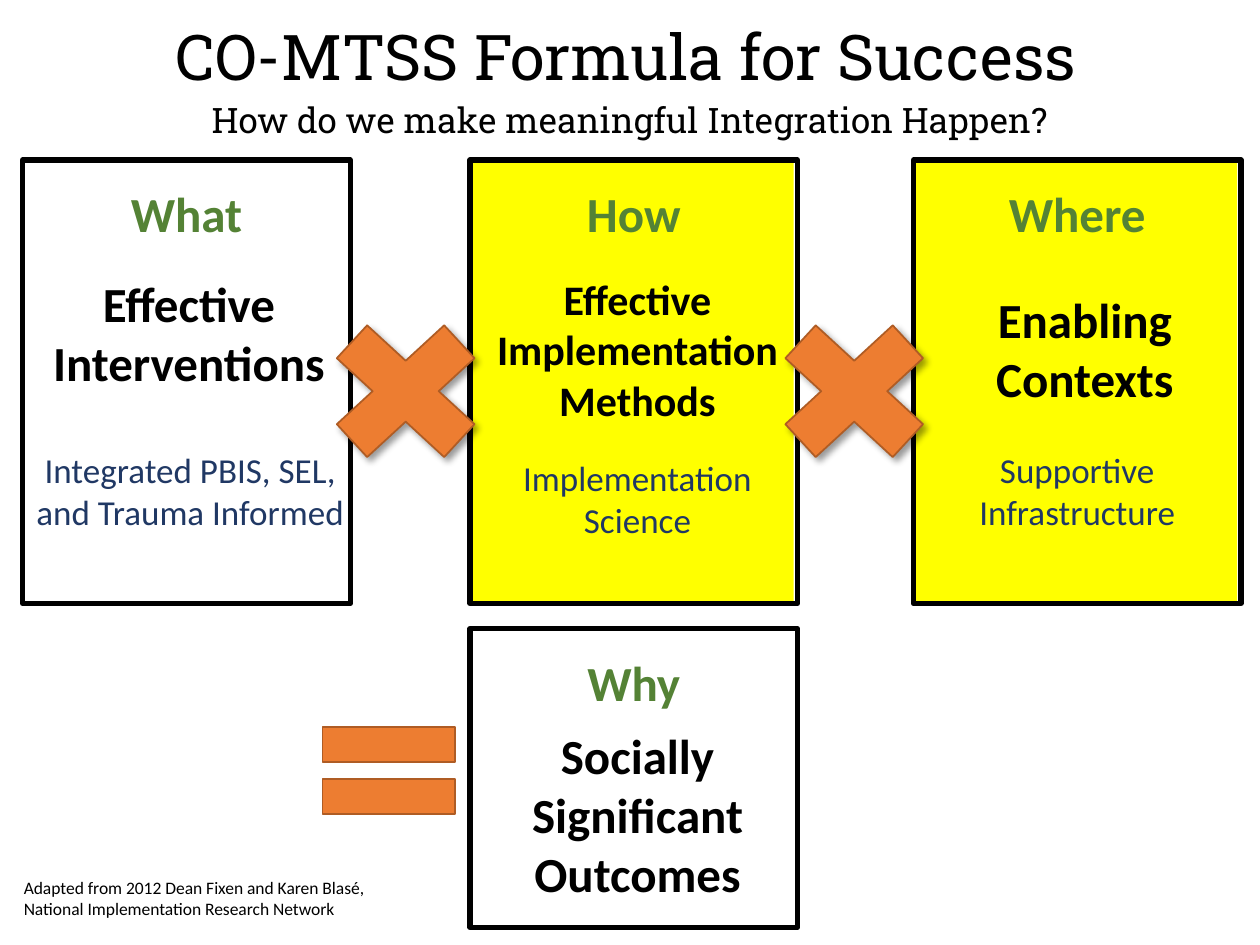
from dataclasses import dataclass

from lxml import etree
from pptx import Presentation
from pptx.dml.color import RGBColor
from pptx.enum.shapes import MSO_SHAPE
from pptx.enum.text import PP_ALIGN
from pptx.oxml.ns import qn
from pptx.shapes.autoshape import Shape
from pptx.slide import Slide
from pptx.util import Inches, Pt

RECTANGLE = MSO_SHAPE.RECTANGLE
MULTIPLY = MSO_SHAPE.MATH_MULTIPLY
EQUAL = MSO_SHAPE.MATH_EQUAL
LEFT, CENTER = PP_ALIGN.LEFT, PP_ALIGN.CENTER

COLORS = {
    "black": "000000",
    "yellow": "FFFF00",
    "question": "548235",
    "detail": "203864",
    "operator": "ED7D31",
    "operator_edge": "AF5C24",
}
BODY_FONT, TITLE_FONT = "Calibri", "Roboto Slab"
CARD_WIDTH, LABEL_WIDTH = 2.6, 2.66


@dataclass(frozen=True)
class Box:
    left: float
    top: float
    width: float
    height: float


@dataclass(frozen=True)
class Card:
    question: str
    answer: str
    answer_box: Box
    left: float
    top: float = 1.27
    height: float = 3.52
    answer_size: int = 28
    detail: str = ""
    detail_box: Box | None = None
    highlighted: bool = False


CARDS = [
    Card("What", "Effective Interventions", Box(0.17, 2.12, LABEL_WIDTH, 1.04), 0.18,
         detail="Integrated PBIS, SEL, and Trauma Informed",
         detail_box=Box(0.18, 3.51, LABEL_WIDTH, 0.77)),
    Card("How", "Effective Implementation Methods", Box(3.73, 2.12, LABEL_WIDTH, 1.31), 3.73,
         answer_size=24, detail="Implementation Science",
         detail_box=Box(3.73, 3.57, LABEL_WIDTH, 0.77), highlighted=True),
    Card("Where", "Enabling Contexts", Box(7.28, 2.25, LABEL_WIDTH, 1.04), 7.25,
         detail="Supportive Infrastructure",
         detail_box=Box(7.22, 3.51, LABEL_WIDTH, 0.77), highlighted=True),
    Card("Why", "Socially Significant Outcomes", Box(3.73, 5.71, LABEL_WIDTH, 1.51), 3.73,
         top=4.99, height=2.37),
]


def rgb(name: str) -> RGBColor:
    return RGBColor.from_string(COLORS[name])


def add_text(slide: Slide, text: str, box: Box, *, size: int, color: str = "black",
             font: str = BODY_FONT, bold: bool = False, align: PP_ALIGN = CENTER) -> None:
    frame = slide.shapes.add_textbox(
        Inches(box.left), Inches(box.top), Inches(box.width), Inches(box.height)
    ).text_frame
    frame.word_wrap = True
    paragraph = frame.paragraphs[0]
    paragraph.text = text
    paragraph.alignment = align
    for run in paragraph.runs:
        run.font.name = font
        run.font.size = Pt(size)
        run.font.bold = bold
        run.font.color.rgb = rgb(color)


def add_block(slide: Slide, kind: MSO_SHAPE, box: Box, *, fill: str | None = None,
              line: str | None = None, line_width: float = 1) -> Shape:
    block = slide.shapes.add_shape(
        kind, Inches(box.left), Inches(box.top), Inches(box.width), Inches(box.height)
    )
    block.shadow.inherit = False
    if fill:
        block.fill.solid()
        block.fill.fore_color.rgb = rgb(fill)
    else:
        block.fill.background()
    if line:
        block.line.color.rgb = rgb(line)
        block.line.width = Pt(line_width)
    else:
        block.line.fill.background()
    return block


def add_shadow(block: Shape) -> None:
    """Cast a soft black shadow down and to the right."""
    effects = block.element.spPr.find(qn("a:effectLst"))
    shadow = etree.SubElement(effects, qn("a:outerShdw"), blurRad=str(Pt(4)),
                              dist=str(Pt(3)), dir=str(45 * 60000), rotWithShape="0")
    color = etree.SubElement(shadow, qn("a:srgbClr"), val=COLORS["black"])
    etree.SubElement(color, qn("a:alpha"), val="40000")


def add_card(slide: Slide, card: Card) -> None:
    if card.detail_box:
        add_text(slide, card.detail, card.detail_box, size=20, color="detail")
    add_text(slide, card.answer, card.answer_box, size=card.answer_size, bold=True)
    add_block(slide, RECTANGLE, Box(card.left, card.top, CARD_WIDTH, card.height),
              line="black", line_width=3)
    add_text(slide, card.question, Box(card.left - 0.03, card.top + 0.14, LABEL_WIDTH, 0.57),
             size=28, color="question", bold=True)


def main() -> None:
    presentation = Presentation()
    presentation.slide_width, presentation.slide_height = Inches(10), Inches(7.5)
    slide = presentation.slides.add_slide(presentation.slide_layouts[6])

    for card in CARDS:
        if card.highlighted:
            add_block(slide, RECTANGLE, Box(card.left, 1.26, 2.57, card.height), fill="yellow")
    for card in CARDS:
        add_card(slide, card)

    for left in (2.4, 5.96):
        times = add_block(slide, MULTIPLY, Box(left, 2.35, 1.64, 1.51),
                          fill="operator", line="operator_edge")
        add_shadow(times)
    add_block(slide, EQUAL, Box(2.37, 5.53, 1.43, 1.17), fill="operator", line="operator_edge")

    add_text(slide, "Adapted from 2012 Dean Fixen and Karen Blasé,\n"
             "National Implementation Research Network",
             Box(0.09, 6.91, 2.95, 0.44), size=10, align=LEFT)
    add_text(slide, "CO-MTSS Formula for Success", Box(0.09, 0.09, 9.76, 0.71),
             size=36, font=TITLE_FONT)
    add_text(slide, "How do we make meaningful Integration Happen?", Box(0, 0.73, 10, 0.44),
             size=20, font=TITLE_FONT)

    presentation.save("out.pptx")


if __name__ == "__main__":
    main()
